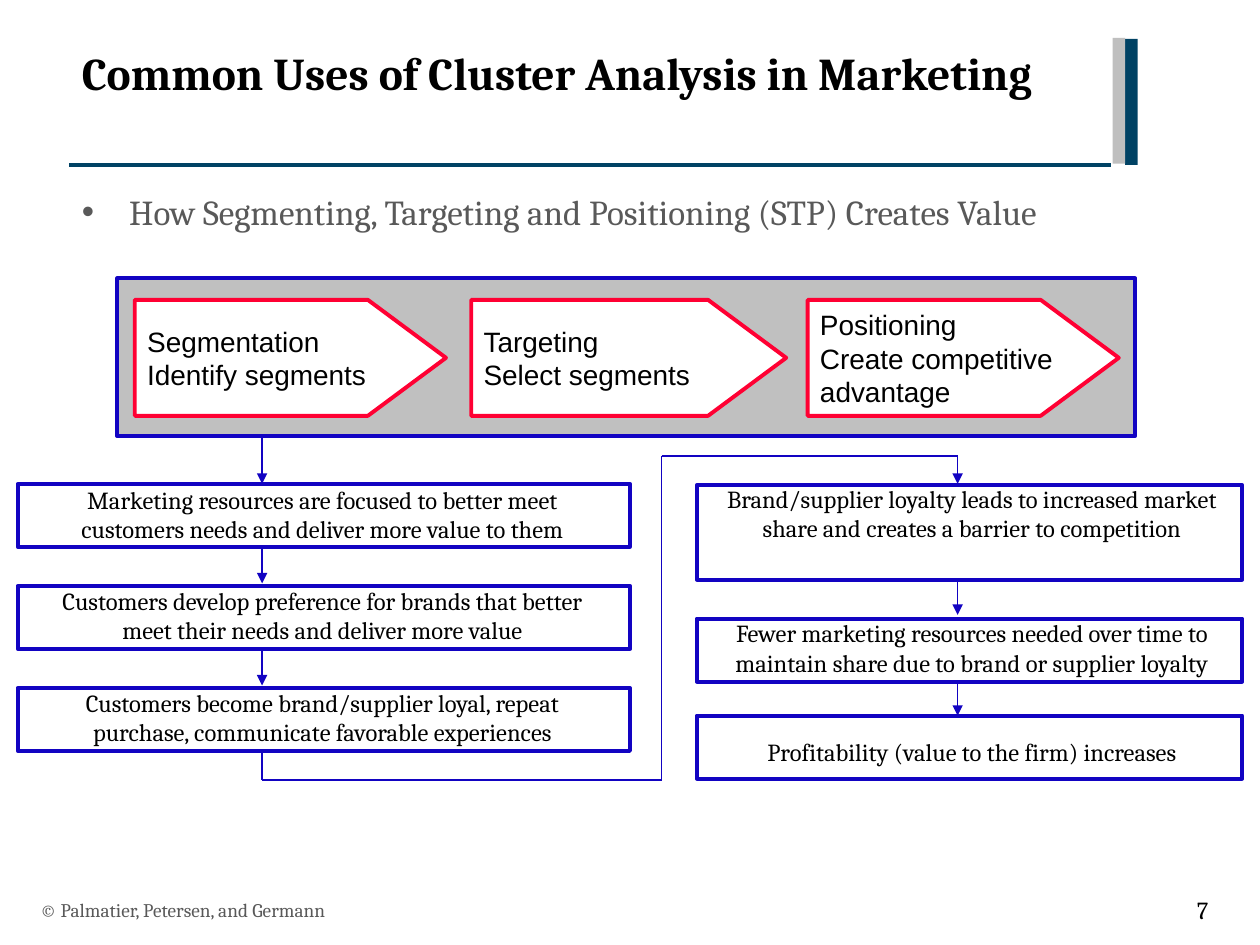
from lxml.etree import SubElement
from pptx import Presentation
from pptx.dml.color import RGBColor
from pptx.enum.shapes import MSO_CONNECTOR, MSO_SHAPE
from pptx.enum.text import MSO_ANCHOR, MSO_AUTO_SIZE, PP_ALIGN
from pptx.oxml.ns import qn
from pptx.util import Inches, Pt

BLACK = RGBColor(0x00, 0x00, 0x00)
WHITE = RGBColor(0xFF, 0xFF, 0xFF)
GRAY = RGBColor(0x59, 0x59, 0x59)
BAND_GRAY = RGBColor(0xC0, 0xC0, 0xC0)
BAR_GRAY = RGBColor(0xBF, 0xBF, 0xBF)
TEAL = RGBColor(0x00, 0x42, 0x64)
BLUE = RGBColor(0x12, 0x03, 0xC2)
RED = RGBColor(0xFF, 0x00, 0x33)

TITLE = "Common Uses of Cluster Analysis in Marketing"
SUBTITLE = "How Segmenting, Targeting and Positioning (STP) Creates Value"
FOOTER = "© Palmatier, Petersen, and Germann"
PAGE_NUMBER = "7"

# Heading, detail, width
STAGES = [
    ("Segmentation", "Identify segments", 2.47),
    ("Targeting", "Select segments", 2.5),
    ("Positioning", "Create competitive advantage", 2.47),
]
STAGE_LEFT, STAGE_STEP, STAGE_TOP, STAGE_HEIGHT = 1.07, 2.67, 2.38, 0.92
STAGE_POINT = 0.62

# Each column: (box left, box width), (text left, text width),
# then rows of (box top, box height, text top, text)
COLUMNS = [
    ((0.14, 4.86), (0.2, 4.72), [
        (3.84, 0.5, 3.8, "Marketing resources are focused to better meet "
                         "customers needs and deliver more value to them"),
        (4.65, 0.5, 4.6, "Customers develop preference for brands that better "
                         "meet their needs and deliver more value"),
        (5.46, 0.5, 5.41, "Customers become brand/supplier loyal, repeat "
                          "purchase, communicate favorable experiences"),
    ]),
    ((5.53, 4.33), (5.61, 4.21), [
        (3.85, 0.75, 3.79, "Brand/supplier loyalty leads to increased market "
                           "share and creates a barrier to competition"),
        (4.91, 0.5, 4.86, "Fewer marketing resources needed over time to "
                          "maintain share due to brand or supplier loyalty"),
        (5.68, 0.5, 5.8, "Profitability (value to the firm) increases"),
    ]),
]

LEFT_FLOW, MIDDLE_FLOW, RIGHT_FLOW = 2.08, 5.25, 7.6
FLOW_TOP, FLOW_BOTTOM = 3.62, 6.19
ARROWS = [
    (LEFT_FLOW, 3.46, 3.84), (LEFT_FLOW, 4.34, 4.63), (LEFT_FLOW, 5.17, 5.44),
    (RIGHT_FLOW, FLOW_TOP, 3.84), (RIGHT_FLOW, 4.62, 4.88), (RIGHT_FLOW, 5.41, 5.68),
]
RETURN_ROUTE = [
    (LEFT_FLOW, 5.98), (LEFT_FLOW, FLOW_BOTTOM), (MIDDLE_FLOW, FLOW_BOTTOM),
    (MIDDLE_FLOW, FLOW_TOP), (RIGHT_FLOW, FLOW_TOP),
]


def write(shape, lines, size, color=BLACK, font="Cambria", bold=False,
          align=PP_ALIGN.LEFT, anchor=MSO_ANCHOR.TOP):
    frame = shape.text_frame
    frame.word_wrap = True
    frame.auto_size = MSO_AUTO_SIZE.NONE
    frame.vertical_anchor = anchor
    frame.text = "\n".join(lines)
    for paragraph in frame.paragraphs:
        paragraph.alignment = align
        paragraph.space_before = Pt(0)
        paragraph.font.size = Pt(size)
        paragraph.font.name = font
        paragraph.font.bold = bold
        paragraph.font.color.rgb = color


def place(shape, left, top, width, height):
    shape.left, shape.top = Inches(left), Inches(top)
    shape.width, shape.height = Inches(width), Inches(height)


def add_box(slide, box, fill, line=None, preset=MSO_SHAPE.RECTANGLE):
    shape = slide.shapes.add_shape(preset, *map(Inches, box))
    shape.shadow.inherit = False
    shape.fill.solid()
    shape.fill.fore_color.rgb = fill
    if line is None:
        shape.line.fill.background()
    else:
        shape.line.color.rgb = line
        shape.line.width = Pt(2.25)
    return shape


def add_text(slide, box, text, size, **style):
    write(slide.shapes.add_textbox(*map(Inches, box)), [text], size, **style)


def add_line(slide, start, end, color=BLUE, width=1, arrow=False):
    line = slide.shapes.add_connector(
        MSO_CONNECTOR.STRAIGHT, *map(Inches, (*start, *end)))
    line.line.color.rgb = color
    line.line.width = Pt(width)
    if arrow:
        SubElement(line.line._get_or_add_ln(), qn("a:tailEnd"), type="triangle")
    SubElement(line._element.spPr, qn("a:effectLst"))


def add_bullet(paragraph):
    properties = paragraph._p.get_or_add_pPr()
    properties.set("marL", str(Inches(0.25)))
    properties.set("indent", str(-Inches(0.25)))
    bullet_color = SubElement(properties, qn("a:buClr"))
    SubElement(bullet_color, qn("a:srgbClr"), val="1F497D")
    SubElement(properties, qn("a:buSzPct"), val="75000")
    SubElement(properties, qn("a:buChar"), char="■")


def add_heading(slide):
    add_line(slide, (0.55, 1.31), (8.82, 1.31), TEAL, 2)
    add_box(slide, (8.93, 0.31, 0.1, 1), TEAL)
    add_box(slide, (8.83, 0.3, 0.1, 1), BAR_GRAY)
    title, body = slide.placeholders
    place(title, 0.55, 0.31, 8.26, 0.88)
    write(title, [TITLE], 26, bold=True)
    place(body, 0.55, 1.46, 9.14, 5.41)
    add_bullet(body.text_frame.paragraphs[0])
    write(body, [SUBTITLE], 20, GRAY)


def add_stages(slide):
    add_box(slide, (0.93, 2.21, 8.08, 1.25), BAND_GRAY, BLUE)
    for index, (heading, detail, width) in enumerate(STAGES):
        box = (STAGE_LEFT + index * STAGE_STEP, STAGE_TOP, width, STAGE_HEIGHT)
        stage = add_box(slide, box, WHITE, RED, MSO_SHAPE.PENTAGON)
        stage.adjustments[0] = STAGE_POINT / STAGE_HEIGHT
        write(stage, [heading, detail], 16, font="Arial", anchor=MSO_ANCHOR.MIDDLE)


def add_flow(slide):
    for (left, width), (text_left, text_width), rows in COLUMNS:
        for top, height, text_top, text in rows:
            add_box(slide, (left, top, width, height), WHITE, BLUE)
            add_text(slide, (text_left, text_top, text_width, 0.57), text, 14,
                     align=PP_ALIGN.CENTER)
    for x, top, bottom in ARROWS:
        add_line(slide, (x, top), (x, bottom), arrow=True)
    for start, end in zip(RETURN_ROUTE, RETURN_ROUTE[1:]):
        add_line(slide, start, end)


def main():
    presentation = Presentation()
    presentation.slide_width, presentation.slide_height = Inches(10), Inches(7.5)
    slide = presentation.slides.add_slide(presentation.slide_layouts[1])
    add_heading(slide)
    add_stages(slide)
    add_flow(slide)
    add_text(slide, (0.22, 7.02, 6.7, 0.4), FOOTER, 11, color=GRAY,
             anchor=MSO_ANCHOR.MIDDLE)
    add_text(slide, (9.08, 7.02, 0.61, 0.4), PAGE_NUMBER, 14,
             align=PP_ALIGN.RIGHT, anchor=MSO_ANCHOR.MIDDLE)
    presentation.save("out.pptx")


if __name__ == "__main__":
    main()
